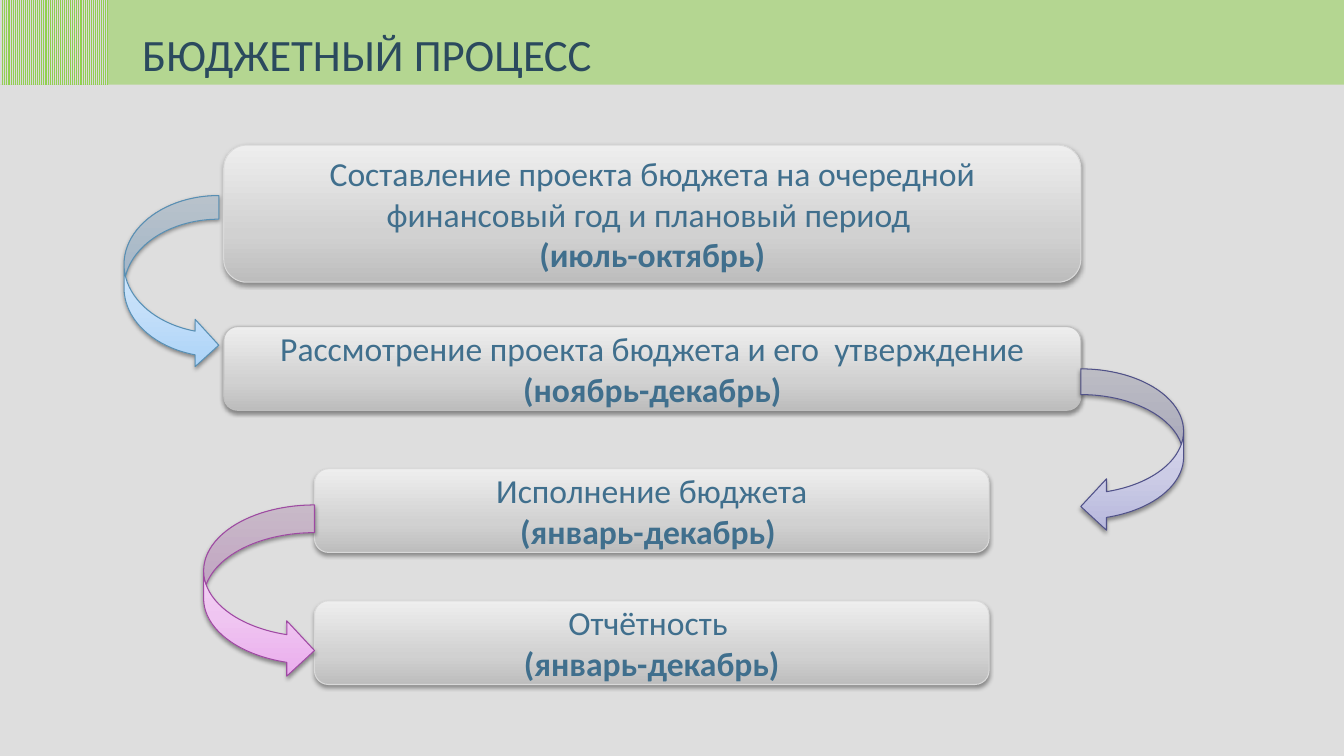
import copy

import lxml.etree
import pptx
import pptx.dml.color
import pptx.enum.dml
import pptx.enum.shapes
import pptx.enum.text
import pptx.oxml
import pptx.oxml.ns
import pptx.util

RGB = pptx.dml.color.RGBColor
Kind = pptx.enum.shapes.MSO_SHAPE
Align = pptx.enum.text.PP_ALIGN
Anchor = pptx.enum.text.MSO_ANCHOR
qn = pptx.oxml.ns.qn

BACK = RGB(0xDE, 0xDE, 0xDE)
GREEN = RGB(0x92, 0xD0, 0x50)
PALE = RGB(0xD9, 0xD9, 0xD9)
EDGE = RGB(0xBF, 0xBF, 0xBF)
NAVY = RGB(0x2B, 0x4A, 0x5E)
STEEL = RGB(0x40, 0x6F, 0x8D)
GRAYS = RGB(0xBD, 0xBD, 0xBD), RGB(0xD1, 0xD1, 0xD1), RGB(0xEE, 0xEE, 0xEE)
BLUES = RGB(0xAB, 0xD3, 0xF8), RGB(0xC4, 0xDF, 0xF9), RGB(0xE7, 0xF3, 0xFE)
VIOLETS = RGB(0xB6, 0xB7, 0xDC), RGB(0xCC, 0xCC, 0xE6), RGB(0xEB, 0xEB, 0xF6)
PINKS = RGB(0xEA, 0xAC, 0xED), RGB(0xEF, 0xC5, 0xF1), RGB(0xFA, 0xE8, 0xFB)
BLUE = RGB(0x58, 0x8F, 0xB3)
VIOLET = RGB(0x50, 0x51, 0x88)
PINK = RGB(0x9E, 0x49, 0xA2)

SHADE = (
    '<a:outerShdw xmlns:a="http://schemas.openxmlformats.org/drawingml/2006/main" '
    'blurRad="39370" dist="20320" dir="5400000" rotWithShape="0">'
    '<a:srgbClr val="000000"><a:alpha val="38000"/></a:srgbClr></a:outerShdw>'
)


class Deck:
    """Style and current slide; lengths are percent of the slide's size."""

    head = {"name": "Calibri", "size": pptx.util.Pt(32), "bold": False}
    body = {"name": "Calibri", "size": pptx.util.Pt(24)}

    def __init__(self):
        self.prs = pptx.Presentation()
        self.prs.slide_width = pptx.util.Inches(13.33)
        self.prs.slide_height = pptx.util.Inches(7.5)
        self.slide = self.prs.slides.add_slide(self.prs.slide_layouts[5])
        fill = self.slide.background.fill
        fill.solid()
        fill.fore_color.rgb = BACK

    def place(self, left, top, width, height):
        wide, high = self.prs.slide_width, self.prs.slide_height
        return [int(part * full / 100) for part, full in
                zip((left, top, width, height), (wide, high, wide, high))]

    def label(self, para, text, form, color, align):
        para.alignment = align
        run = para.add_run()
        run.text = text
        for name, value in form.items():
            setattr(run.font, name, value)
        run.font.color.rgb = color

    def title(self, text, *area):
        shape = self.slide.shapes.title
        names = "left", "top", "width", "height"
        for name, value in zip(names, self.place(*area)):
            setattr(shape, name, value)
        frame = shape.text_frame
        form = {"word_wrap": False, "vertical_anchor": Anchor.TOP,
                "auto_size": pptx.enum.text.MSO_AUTO_SIZE.NONE}
        for name, value in form.items():
            setattr(frame, name, value)
        self.label(frame.paragraphs[0], text, self.head, NAVY, Align.LEFT)
        # Bring the title in front of the band
        self.slide.shapes._spTree.append(shape._element)

    def shape(self, kind, *area):
        shape = self.slide.shapes.add_shape(kind, *self.place(*area))
        shape.shadow.inherit = False
        return shape

    def band(self, color, alpha, *area):
        shape = self.shape(Kind.RECTANGLE, *area)
        shape.fill.solid()
        shape.fill.fore_color.rgb = color
        tint = shape._element.spPr.find(".//" + qn("a:srgbClr"))
        lxml.etree.SubElement(tint, qn("a:alpha"), val=str(alpha * 1000))
        shape.line.fill.background()

    def stripes(self, front, back, *area):
        shape = self.shape(Kind.RECTANGLE, *area)
        shape.fill.patterned()
        shape.fill.pattern = pptx.enum.dml.MSO_PATTERN.LIGHT_VERTICAL
        shape.fill.fore_color.rgb = front
        shape.fill.back_color.rgb = back
        shape.line.fill.background()

    def glossy(self, kind, tones, edge, *area):
        shape = self.shape(kind, *area)
        props = shape._element.spPr
        shape.fill.gradient()
        shape.fill.gradient_angle = 90
        stops = props.find(".//" + qn("a:gsLst"))
        stops.append(copy.deepcopy(stops[0]))
        for stop, tone, spot in zip(shape.fill.gradient_stops, tones, (0, 0.35, 1)):
            stop.color.rgb = tone
            stop.position = spot
        shape.line.color.rgb = edge
        shape.line.width = pptx.util.Pt(0.75)
        props.find(qn("a:effectLst")).append(pptx.oxml.parse_xml(SHADE))
        return shape

    def stage(self, text, term, edge, *area):
        frame = self.glossy(Kind.ROUNDED_RECTANGLE, GRAYS, edge, *area).text_frame
        frame.word_wrap = True
        frame.vertical_anchor = Anchor.MIDDLE
        self.label(frame.paragraphs[0], text, self.body, STEEL, Align.CENTER)
        bold = {**self.body, "bold": True}
        self.label(frame.add_paragraph(), term, bold, STEEL, Align.CENTER)

    def arrow(self, tones, edge, flip, *area):
        shape = self.glossy(Kind.CURVED_RIGHT_ARROW, tones, edge, *area)
        if flip:
            shape._element.spPr.find(qn("a:xfrm")).set("flipH", "1")


def main():
    deck = Deck()

    # Header
    deck.band(GREEN, 54, 0, 0, 100, 11.2)
    deck.title("БЮДЖЕТНЫЙ ПРОЦЕСС", 9.83, 2.93, 35.26, 8.53)
    deck.stripes(GREEN, PALE, 0, 0, 8.03, 11.2)

    # Stages of the budget: two wide, two narrow
    wide, slim, low = (16.65, 63.77), (23.4, 50.19), 11.07
    stages = [
        ("Составление проекта бюджета на очередной финансовый год и плановый период ",
         "(июль-октябрь)", PALE, wide, 19.2, 18.13),
        ("Рассмотрение проекта бюджета и его  утверждение",
         "(ноябрь-декабрь)", EDGE, wide, 43.2, low),
        ("Исполнение бюджета", "(январь-декабрь) ", PALE, slim, 62, low),
        ("Отчётность ", "(январь-декабрь)", PALE, slim, 79.47, low),
    ]
    for text, term, edge, (left, width), top, height in stages:
        deck.stage(text, term, edge, left, top, width, height)

    # Arrows from stage to stage
    deck.arrow(BLUES, BLUE, False, 9.23, 25.87, 7.05, 22.93)
    deck.arrow(VIOLETS, VIOLET, True, 80.42, 48.8, 7.65, 21.6)
    deck.arrow(PINKS, PINK, False, 15.15, 66.8, 8.25, 22.93)

    deck.prs.save("out.pptx")


if __name__ == "__main__":
    main()
